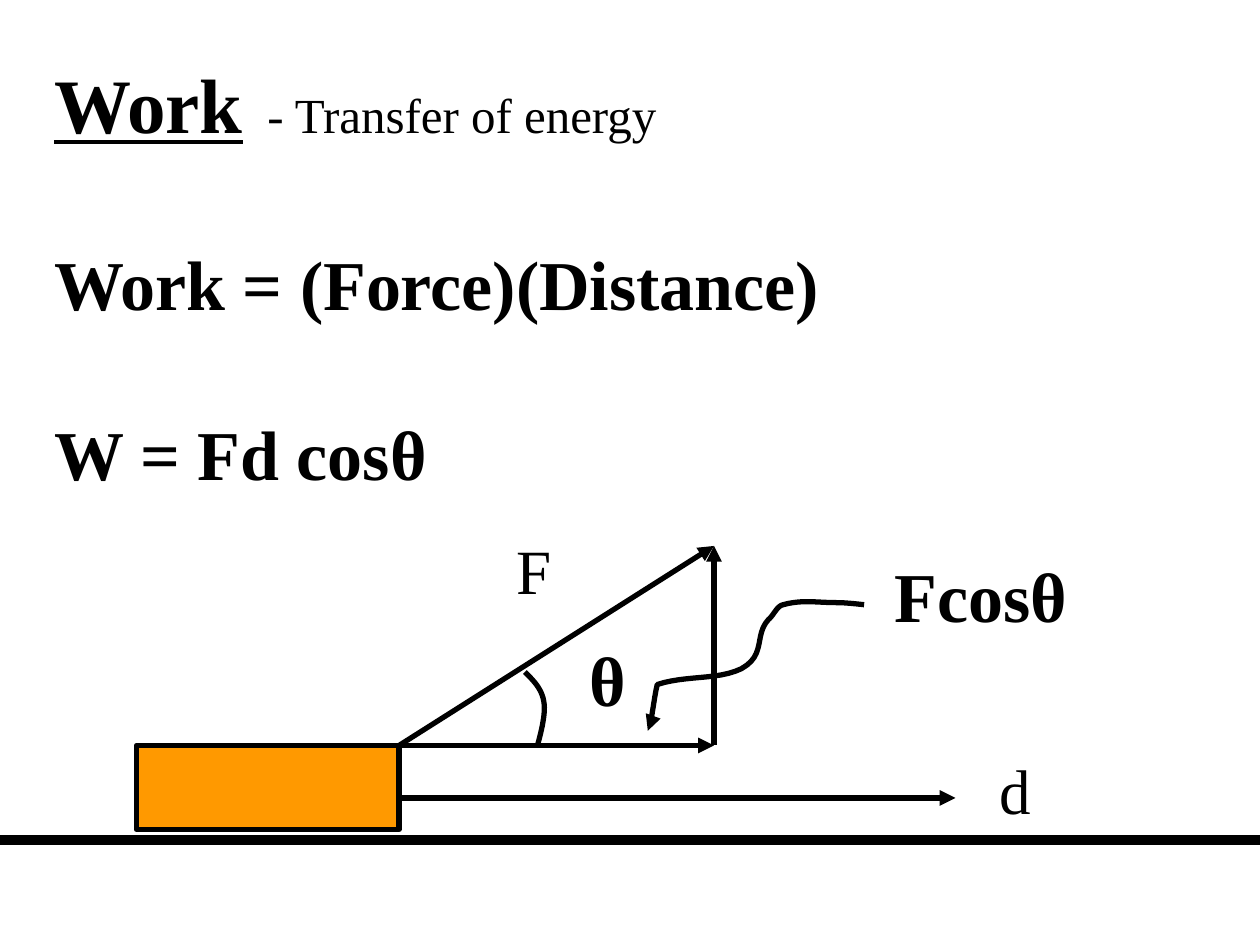
"""Build a slide that defines work, with a force diagram."""
from lxml import etree
from pptx import Presentation, util as u
from pptx.dml.color import RGBColor
from pptx.enum import shapes, text
from pptx.oxml.ns import qn

PX = 7620
BLACK = RGBColor(0, 0, 0)
ORANGE = RGBColor(255, 153, 0)


def pen(shape, width, head=False):
    shape.line.color.rgb = BLACK
    shape.line.width = u.Pt(width)
    props = shape._element.spPr
    if head:
        etree.SubElement(props.find(qn("a:ln")), qn("a:tailEnd"), type="triangle")
    etree.SubElement(props, qn("a:effectLst"))


def style(run, size, bold):
    run.font.name = "Times New Roman"
    run.font.size = u.Pt(size)
    run.font.bold = bold
    run.font.color.rgb = BLACK


deck = Presentation()
deck.slide_width, deck.slide_height = 1200 * PX, 900 * PX
slide = deck.slides.add_slide(deck.slide_layouts[6])

title = slide.shapes.add_textbox(40 * PX, 40 * PX, 1090 * PX, 164 * PX)
frame = title.text_frame
frame.word_wrap = True
frame.margin_top = 14 * PX
for words, size, bold in [("Work", 44, True), (" ", 28, False), ("- Transfer of energy", 28, False)]:
    run = frame.paragraphs[0].add_run()
    run.text = words
    style(run, size, bold)
    run.font.underline = bold
frame.paragraphs[0].runs[1]._r.get_or_add_rPr().set("spc", "700")

rules = slide.shapes.add_textbox(40 * PX, 216 * PX, 1120 * PX, 308 * PX)
frame = rules.text_frame
frame.word_wrap = True
frame.margin_top = 13 * PX
frame.text = "Work = (Force)(Distance)\nW = Fd cosθ"
for para in frame.paragraphs:
    style(para.runs[0], 40, True)
frame.paragraphs[1].space_before = u.Pt(49)

ground = slide.shapes.add_connector(shapes.MSO_CONNECTOR.STRAIGHT, 0, 800 * PX, 1200 * PX, 800 * PX)
pen(ground, 6)

parts = slide.shapes.add_group_shape().shapes
block = parts.add_shape(shapes.MSO_SHAPE.RECTANGLE, 130 * PX, 710 * PX, 250 * PX, 80 * PX)
block.fill.solid()
block.fill.fore_color.rgb = ORANGE
pen(block, 3)

arrows = [
    (380, 710, 680, 520),
    (380, 760, 910, 760),
    (380, 710, 680, 710),
    (680, 710, 680, 520),
]
for ends in arrows:
    arrow = parts.add_connector(shapes.MSO_CONNECTOR.STRAIGHT, *[n * PX for n in ends])
    pen(arrow, 3, True)

labels = [
    ("F", 480, 500, 58, 84, 36, False),
    ("d", 940, 710, 54, 84, 36, False),
    ("θ", 550, 600, 59, 92, 40, True),
    ("Fcosθ", 840, 520, 188, 92, 40, True),
]
for words, left, top, width, height, size, bold in labels:
    label = parts.add_textbox(left * PX, top * PX, width * PX, height * PX)
    label.text_frame.word_wrap = False
    label.text_frame.auto_size = text.MSO_AUTO_SIZE.SHAPE_TO_FIT_TEXT
    label.text_frame.text = words
    style(label.text_frame.paragraphs[0].runs[0], size, bold)

angle = [(500, 640), (508, 648), (516, 656), (518, 668), (520, 679), (516, 695), (512, 710)]
squiggle = [
    (823, 576), (814, 575), (805, 574), (796, 574),
    (780, 574), (763, 571), (746, 576), (740, 577), (737, 586), (732, 590),
    (718, 605), (730, 624), (706, 637), (683, 648), (653, 643), (626, 652),
    (623, 665), (622, 677), (619, 691), (617, 707), (617, 698), (617, 696),
]
STEPS = 12
for knots, head in [(angle, False), (squiggle, True)]:
    trail = []
    for i in range(0, len(knots) - 1, 3):
        a, b, c, d = knots[i:i + 4]
        for step in range(1, STEPS + 1):
            t = step / STEPS
            s = 1 - t
            trail.append(tuple(
                PX * (s**3 * a[k] + 3 * s * s * t * b[k] + 3 * s * t * t * c[k] + t**3 * d[k])
                for k in (0, 1)
            ))
    path = parts.build_freeform(knots[0][0] * PX, knots[0][1] * PX)
    path.add_line_segments(trail, close=False)
    curve = path.convert_to_shape()
    curve.fill.background()
    pen(curve, 3, head)

deck.save("out.pptx")
